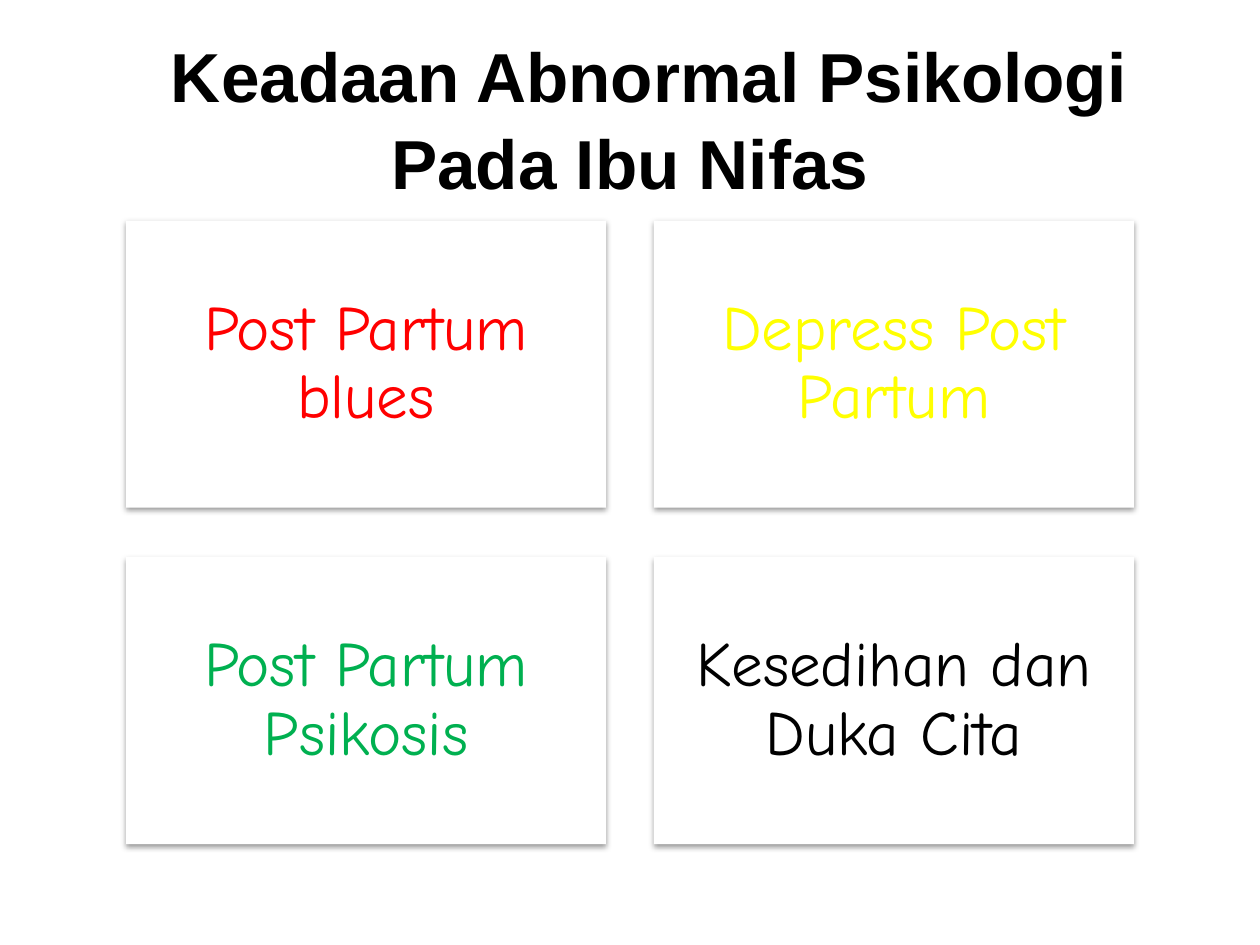
import dataclasses

import lxml.etree
import pptx
import pptx.dml.color
import pptx.enum.shapes
import pptx.enum.text
import pptx.oxml.ns
import pptx.slide
import pptx.util

Inches = pptx.util.Inches
Pt = pptx.util.Pt
RGBColor = pptx.dml.color.RGBColor
qn = pptx.oxml.ns.qn

WHITE = RGBColor(0xFF, 0xFF, 0xFF)
BLACK = RGBColor(0x00, 0x00, 0x00)
RED = RGBColor(0xFF, 0x00, 0x00)
YELLOW = RGBColor(0xFF, 0xFF, 0x00)
GREEN = RGBColor(0x00, 0xB0, 0x50)

CARD_WIDTH, CARD_HEIGHT = 3.81, 2.28
GRID_LEFT, GRID_TOP = 1, 1.75
COLUMN_STEP, ROW_STEP = 4.19, 2.67
COLUMNS = 2
INSET = 0.15


@dataclasses.dataclass
class Card:
    label: str
    color: RGBColor


CARDS = [
    Card("Post Partum blues", RED),
    Card("Depress Post Partum", YELLOW),
    Card("Post Partum Psikosis", GREEN),
    Card("Kesedihan dan Duka Cita", BLACK),
]


def add_title(page: pptx.slide.Slide, text: str) -> None:
    title = page.shapes.title
    title.left, title.top = Inches(0.5), Inches(0.3)
    title.width, title.height = Inches(9), Inches(1.25)
    frame = title.text_frame
    frame.text = text
    frame.auto_size = pptx.enum.text.MSO_AUTO_SIZE.NONE
    frame.vertical_anchor = pptx.enum.text.MSO_ANCHOR.MIDDLE
    para = frame.paragraphs[0]
    para.alignment = pptx.enum.text.PP_ALIGN.CENTER
    para.line_spacing = 1.04
    para.font.name = "Arial"
    para.font.size = Pt(39.6)
    para.font.bold = True
    para.font.color.rgb = BLACK


def add_shadow(box) -> None:
    box.shadow.inherit = False
    effects = box._element.spPr.find(qn("a:effectLst"))
    shadow = lxml.etree.SubElement(
        effects,
        qn("a:outerShdw"),
        blurRad=str(Pt(3.1)),
        dist=str(Pt(1.6)),
        dir="5400000",
        rotWithShape="0",
    )
    color = lxml.etree.SubElement(shadow, qn("a:srgbClr"), val=str(BLACK))
    lxml.etree.SubElement(color, qn("a:alpha"), val="38000")


def add_card(page: pptx.slide.Slide, card: Card, left: float, top: float) -> None:
    box = page.shapes.add_shape(
        pptx.enum.shapes.MSO_SHAPE.RECTANGLE,
        Inches(left),
        Inches(top),
        Inches(CARD_WIDTH),
        Inches(CARD_HEIGHT),
    )
    box.fill.solid()
    box.fill.fore_color.rgb = WHITE
    box.line.fill.background()
    add_shadow(box)

    frame = box.text_frame
    frame.word_wrap = True
    frame.vertical_anchor = pptx.enum.text.MSO_ANCHOR.MIDDLE
    frame.margin_left = frame.margin_right = Inches(INSET)
    frame.margin_top = frame.margin_bottom = Inches(INSET)
    frame.text = card.label
    para = frame.paragraphs[0]
    para.alignment = pptx.enum.text.PP_ALIGN.CENTER
    para.line_spacing = 0.9
    para.font.name = "Comic Neue"
    para.font.size = Pt(36)
    para.font.color.rgb = card.color


def main() -> None:
    deck = pptx.Presentation()
    deck.slide_width, deck.slide_height = Inches(10), Inches(7.5)
    page = deck.slides.add_slide(deck.slide_layouts.get_by_name("Title Only"))
    page.background.fill.solid()
    page.background.fill.fore_color.rgb = WHITE

    add_title(page, "  Keadaan Abnormal Psikologi Pada Ibu Nifas")
    for index, card in enumerate(CARDS):
        row, column = divmod(index, COLUMNS)
        add_card(page, card, GRID_LEFT + column * COLUMN_STEP, GRID_TOP + row * ROW_STEP)

    deck.save("out.pptx")


if __name__ == "__main__":
    main()
